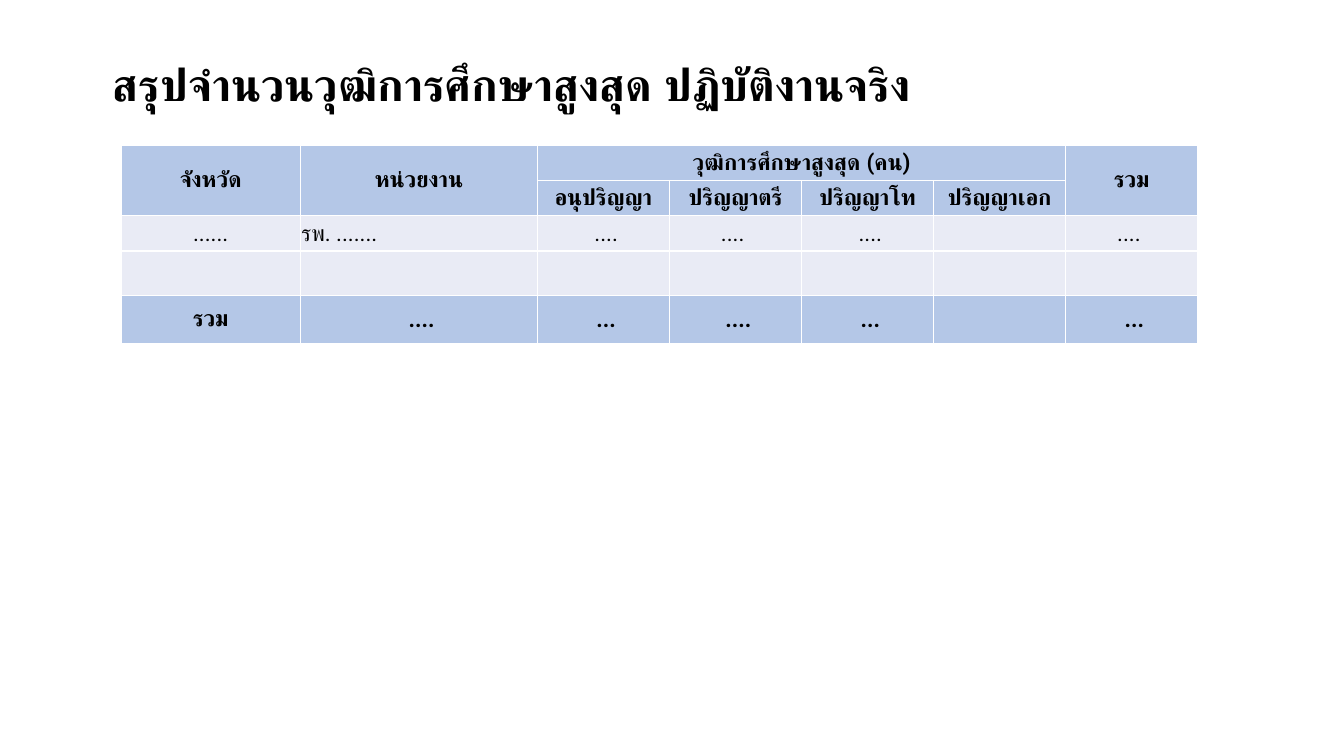
from lxml import etree
from pptx import Presentation
from pptx.dml.color import RGBColor
from pptx.enum.text import MSO_ANCHOR, PP_ALIGN
from pptx.oxml.ns import qn
from pptx.util import Inches, Pt

CENTER, LEFT = PP_ALIGN.CENTER, PP_ALIGN.LEFT
MIDDLE = MSO_ANCHOR.MIDDLE
BLACK = RGBColor(0x00, 0x00, 0x00)
WHITE = RGBColor(0xFF, 0xFF, 0xFF)
BLUE = RGBColor(0xB4, 0xC7, 0xE7)
PALE = RGBColor(0xE9, 0xEB, 0xF5)

COL_WIDTHS = [1.78, 2.35] + [1.31] * 5
ROW_HEIGHTS = [0.35, 0.35, 0.35, 0.44, 0.48]
BODY_ROWS = (2, 3)
ROWS = [
    ["จังหวัด", "หน่วยงาน", "วุฒิการศึกษาสูงสุด (คน)", "", "", "", "รวม"],
    ["", "", "อนุปริญญา", "ปริญญาตรี", "ปริญญาโท", "ปริญญาเอก", ""],
    ["......", "รพ. .......", " ....", ".... ", " ....", "", ".... "],
    [""] * 7,
    ["รวม", " ....", " ...", " ....", " ...", "", " ..."],
]
# First and last cell of each merged block, as (row, column)
MERGES = [((0, 0), (1, 0)), ((0, 1), (1, 1)), ((0, 2), (0, 5)), ((0, 6), (1, 6))]


def add_run(p, text, size, font, bold):
    r = p.add_run()
    r.text = text
    for name, value in {"size": Pt(size), "name": font, "bold": bold}.items():
        setattr(r.font, name, value)
    r.font.color.rgb = BLACK


def add_title(s, text):
    tf = s.shapes.add_textbox(Inches(1.02), Inches(0.5), Inches(10.25), Inches(0.73)).text_frame
    tf.word_wrap = True
    tf.vertical_anchor = MIDDLE
    p = tf.paragraphs[0]
    p.line_spacing = 0.9
    add_run(p, text, 32, "Calibri", True)


def set_borders(cell, color, width):
    """Draw all four sides; call before the fill, which must follow the lines in the XML."""
    tc_pr = cell._tc.get_or_add_tcPr()
    for side in ("a:lnL", "a:lnR", "a:lnT", "a:lnB"):
        ln = etree.SubElement(tc_pr, qn(side), w=str(Pt(width)))
        fill = etree.SubElement(ln, qn("a:solidFill"))
        etree.SubElement(fill, qn("a:srgbClr"), val=str(color))


def format_cell(cell, text, fill, bold, align):
    set_borders(cell, WHITE, 1)
    cell.fill.solid()
    cell.fill.fore_color.rgb = fill
    cell.vertical_anchor = MIDDLE
    cell.margin_left = cell.margin_right = cell.margin_top = Inches(0.01)
    cell.margin_bottom = 0
    p = cell.text_frame.paragraphs[0]
    p.alignment = align
    if text:
        add_run(p, text, 16, "Roboto", bold)


def add_education_table(s):
    table = s.shapes.add_table(
        len(ROWS), len(COL_WIDTHS), Inches(1.2), Inches(1.44),
        Inches(sum(COL_WIDTHS)), Inches(sum(ROW_HEIGHTS))).table
    for col, width in zip(table.columns, COL_WIDTHS):
        col.width = Inches(width)
    for row, height in zip(table.rows, ROW_HEIGHTS):
        row.height = Inches(height)
    for i, texts in enumerate(ROWS):
        body = i in BODY_ROWS
        for j, text in enumerate(texts):
            align = LEFT if body and j == 1 else CENTER
            format_cell(table.cell(i, j), text, PALE if body else BLUE, not body, align)
    for first, last in MERGES:
        table.cell(*first).merge(table.cell(*last))


def main():
    prs = Presentation()
    prs.slide_width, prs.slide_height = Inches(13.33), Inches(7.5)
    s = prs.slides.add_slide(prs.slide_layouts[6])
    add_title(s, "สรุปจำนวนวุฒิการศึกษาสูงสุด ปฏิบัติงานจริง")
    add_education_table(s)
    prs.save("out.pptx")


if __name__ == "__main__":
    main()
